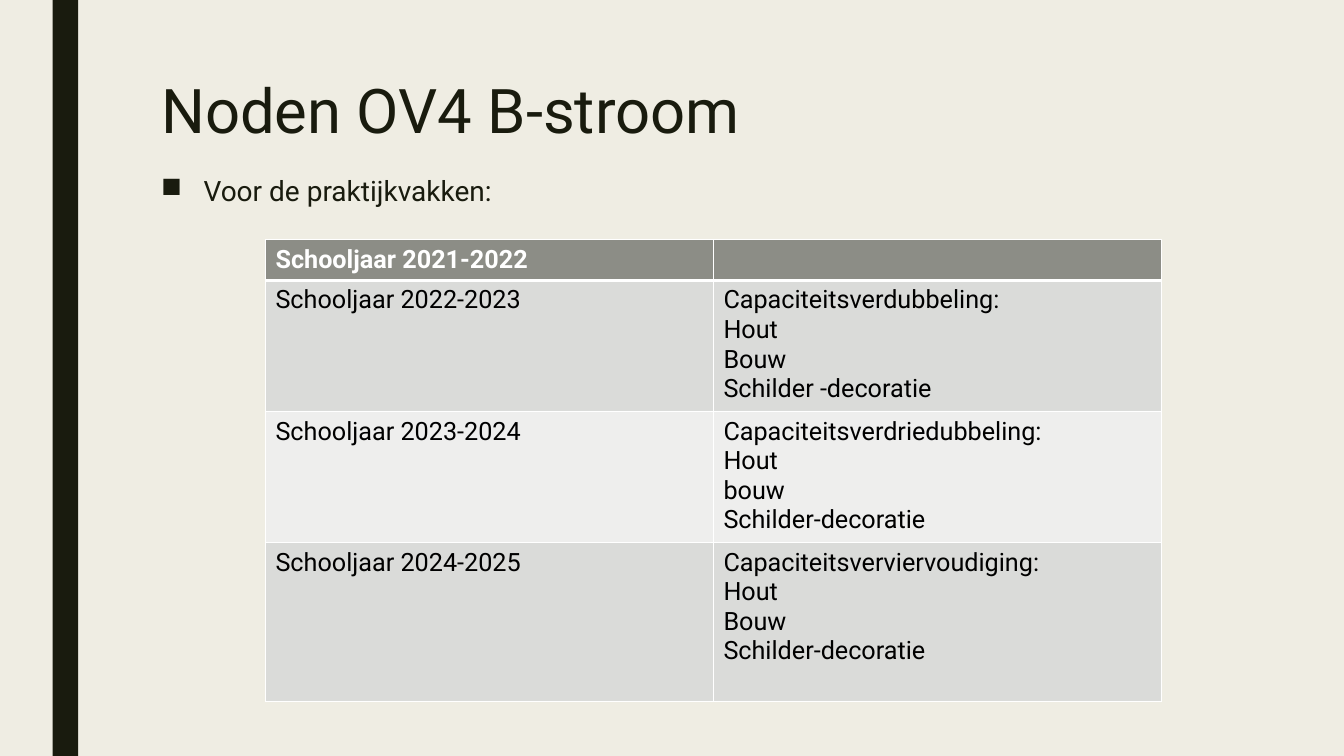
from dataclasses import dataclass

from lxml.etree import SubElement
from pptx import Presentation
from pptx.dml.color import RGBColor
from pptx.enum.shapes import MSO_SHAPE
from pptx.enum.text import MSO_ANCHOR, MSO_AUTO_SIZE, PP_ALIGN
from pptx.oxml.ns import qn
from pptx.util import Cm, Pt


@dataclass(frozen=True)
class Theme:
    font: str = "Roboto"
    background: str = "EFEDE3"
    ink: str = "191B0E"
    header: str = "8C8D86"
    band_dark: str = "DADBD9"
    band_light: str = "EEEEED"
    white: str = "FFFFFF"
    black: str = "000000"
    title_size: int = 44
    body_size: int = 20
    table_size: int = 18
    border: int = 1
    header_border: int = 3


THEME = Theme()
SLIDE_WIDTH, SLIDE_HEIGHT = Cm(33.87), Cm(19.05)

SCHOOL_YEARS = [
    ("Schooljaar 2021-2022", ""),
    ("Schooljaar 2022-2023", "Capaciteitsverdubbeling:\nHout\nBouw\nSchilder -decoratie"),
    ("Schooljaar 2023-2024", "Capaciteitsverdriedubbeling:\nHout\nbouw\nSchilder-decoratie"),
    ("Schooljaar 2024-2025", "Capaciteitsverviervoudiging:\nHout\nBouw\nSchilder-decoratie"),
]
ROW_HEIGHTS = [Cm(1.03), Cm(3.24), Cm(3.24), Cm(4)]


def color(value):
    return RGBColor.from_string(value)


def format_font(paragraph, size, ink, bold=False):
    font = paragraph.font
    font.name = THEME.font
    font.size = Pt(size)
    font.bold = bold
    font.color.rgb = color(ink)


def add_side_bar(slide, left, top, width, height):
    bar = slide.shapes.add_shape(MSO_SHAPE.RECTANGLE, left, top, width, height)
    bar.shadow.inherit = False
    bar.fill.solid()
    bar.fill.fore_color.rgb = color(THEME.ink)
    bar.line.fill.background()


def place_title(slide, text, left, top, width, height):
    title = slide.shapes.title
    title.left, title.top, title.width, title.height = left, top, width, height
    frame = title.text_frame
    frame.text = text
    frame.auto_size = MSO_AUTO_SIZE.NONE
    frame.vertical_anchor = MSO_ANCHOR.TOP
    paragraph = frame.paragraphs[0]
    paragraph.alignment = PP_ALIGN.LEFT
    paragraph.line_spacing = 0.89
    format_font(paragraph, THEME.title_size, THEME.ink)


def add_bullet(slide, text, left, top, width, height):
    frame = slide.shapes.add_textbox(left, top, width, height).text_frame
    frame.word_wrap = True
    frame.text = text
    paragraph = frame.paragraphs[0]
    paragraph.line_spacing = 0.94
    paragraph.space_before = Pt(10)
    paragraph.space_after = Pt(2)
    format_font(paragraph, THEME.body_size, THEME.ink)
    indent = Cm(1.07)
    properties = paragraph._p.get_or_add_pPr()
    properties.set("marL", str(indent))
    properties.set("indent", str(-indent))
    bullet = SubElement(properties, qn("a:buChar"))
    bullet.set("char", "■")
    properties.remove(bullet)
    properties.insert_element_before(bullet, "a:tabLst", "a:defRPr", "a:extLst")


def set_borders(cell, row):
    widths = {
        "a:lnL": THEME.border,
        "a:lnR": THEME.border,
        "a:lnT": THEME.header_border if row == 1 else THEME.border,
        "a:lnB": THEME.header_border if row == 0 else THEME.border,
    }
    properties = cell._tc.get_or_add_tcPr()
    for tag, width in widths.items():
        line = SubElement(properties, qn(tag), w=str(Pt(width)))
        fill = SubElement(line, qn("a:solidFill"))
        SubElement(fill, qn("a:srgbClr"), val=THEME.white)


def add_capacity_table(slide, left, top, width):
    height = sum(ROW_HEIGHTS)
    table = slide.shapes.add_table(len(SCHOOL_YEARS), 2, left, top, width, height).table
    table.horz_banding = False
    for column in table.columns:
        column.width = width // 2
    for row, (texts, row_height) in enumerate(zip(SCHOOL_YEARS, ROW_HEIGHTS)):
        table.rows[row].height = row_height
        is_header = row == 0
        band = THEME.band_dark if row % 2 else THEME.band_light
        ink = THEME.white if is_header else THEME.black
        for column, text in enumerate(texts):
            cell = table.cell(row, column)
            set_borders(cell, row)
            cell.fill.solid()
            cell.fill.fore_color.rgb = color(THEME.header if is_header else band)
            cell.text = text
            for paragraph in cell.text_frame.paragraphs:
                format_font(paragraph, THEME.table_size, ink, is_header)


def build_needs_slide(presentation):
    slide = presentation.slides.add_slide(presentation.slide_layouts[5])
    slide.background.fill.solid()
    slide.background.fill.fore_color.rgb = color(THEME.background)
    margin, content_width = Cm(3.81), Cm(26.67)
    add_side_bar(slide, Cm(1.33), 0, Cm(0.64), SLIDE_HEIGHT)
    place_title(slide, "Noden OV4 B-stroom", margin, Cm(1.9), content_width, Cm(4.11))
    add_bullet(slide, "Voor de praktijkvakken:", margin, Cm(4.32), content_width, Cm(9.96))
    add_capacity_table(slide, Cm(6.69), Cm(6.04), Cm(22.58))


def main():
    presentation = Presentation()
    presentation.slide_width = SLIDE_WIDTH
    presentation.slide_height = SLIDE_HEIGHT
    build_needs_slide(presentation)
    presentation.save("out.pptx")


if __name__ == "__main__":
    main()
